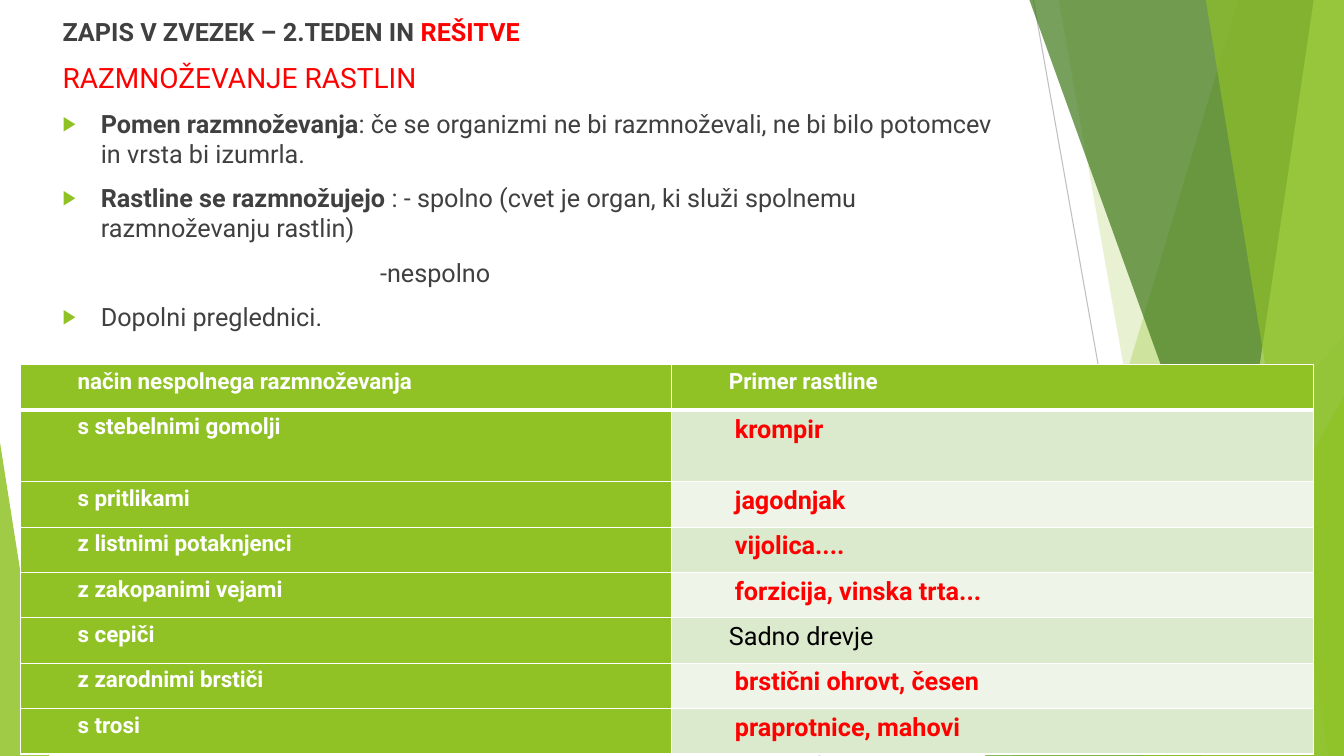
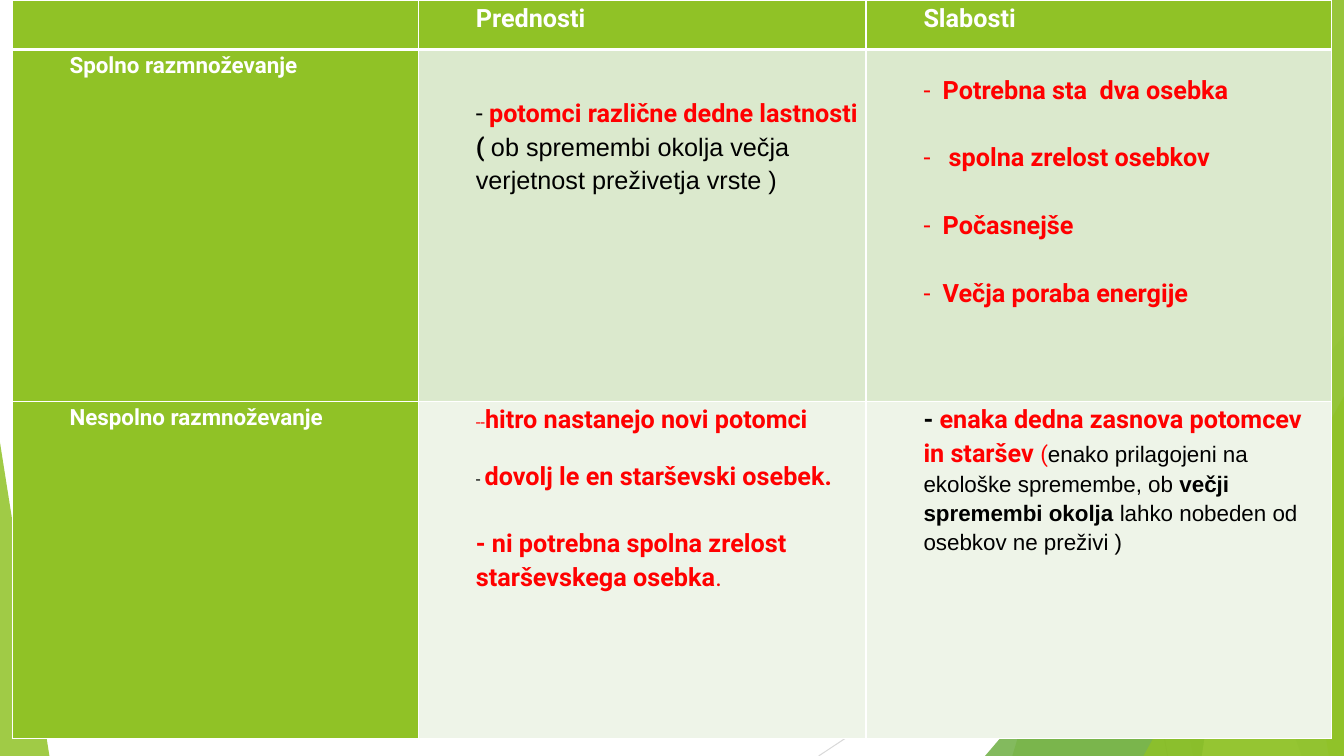
from dataclasses import dataclass

from lxml.etree import SubElement
from pptx import Presentation
from pptx.dml.color import RGBColor
from pptx.enum.shapes import MSO_CONNECTOR as Connector, MSO_SHAPE as Shape
from pptx.enum.text import MSO_AUTO_SIZE as AutoSize
from pptx.oxml.ns import qn
from pptx.util import Inches, Pt

WIDTH, HEIGHT = 13.33, 7.5
GREEN, WHITE, RED, BLACK, GRAY = "90C226", "FFFFFF", "FF0000", "000000", "404040"
BANDS = ("DBE9CD", "EEF4E8")
CELL_INDENT = 0.5
ANSWER_INDENT = 0.56

# name: size, colour, bold, font
STYLES = {
    "heading": (18, GRAY, True, "Roboto"),
    "heading red": (18, RED, True, "Roboto"),
    "topic": (20, RED, False, "Roboto"),
    "body": (18, GRAY, False, "Roboto"),
    "label": (16, WHITE, True, "Roboto"),
    "column": (18, WHITE, True, "Roboto"),
    "answer": (18, RED, True, "Roboto"),
    "answer light": (18, RED, False, "Roboto"),
    "example": (18, BLACK, False, "Roboto"),
    "dash": (12, BLACK, False, "Roboto"),
    "dash red": (12, RED, False, "Roboto"),
    "dash bold": (18, BLACK, True, "Roboto"),
    "bracket": (16, RED, False, "Roboto"),
    "remark": (18, BLACK, False, "Arial"),
    "remark small": (16, BLACK, False, "Arial"),
    "remark bold": (16, BLACK, True, "Arial"),
}

# colour, opacity, top x, bottom x
WEDGES_BACK = [
    (GREEN, 30, 12.28, 10.04),
    (GREEN, 20, 10.5, 11.83),
]
WEDGES_FRONT = [
    ("3F7819", 70, 10.21, 12.91),
    ("C0E474", 70, 13.03, 11.92),
    (GREEN, 65, 11.96, 13.18),
]


@dataclass
class Bullet:
    character: str
    font: str
    colour: str
    percent: int


ARROW = Bullet("▶", "Arial", GREEN, 80)
DASH = Bullet("-", "Roboto", RED, 100)


@dataclass
class Text:
    """One paragraph: (text, style name) runs and its layout."""
    runs: list
    left: float = 0
    hanging: float = 0
    before: float = 0
    bullet: Bullet = None


@dataclass
class Cell:
    paragraphs: list
    top: float = 0


def rgb(value):
    return RGBColor.from_string(value)


def label(text, style="label", left=CELL_INDENT):
    return Cell([Text([(text, style)], left)])


def answer(text):
    return label(text, "answer", ANSWER_INDENT)


def cell_text(*runs, before=0):
    return Text(list(runs), CELL_INDENT, before=before)


class Deck:
    def __init__(self):
        self.presentation = Presentation()
        self.presentation.slide_width = Inches(WIDTH)
        self.presentation.slide_height = Inches(HEIGHT)
        self.slide = None

    def add_slide(self, layout):
        layouts = self.presentation.slide_layouts
        self.slide = self.presentation.slides.add_slide(layouts.get_by_name(layout))
        self.backdrop()

    def backdrop(self):
        self.line(10.25, 0, 11.58, HEIGHT, "BFBFBF")
        self.line(WIDTH, 4.03, 8.12, HEIGHT, "D9D9D9")
        for wedge in WEDGES_BACK:
            self.wedge(*wedge)
        self.triangle(9.77, 3.33, 3.56, "54A021", 72, 1)
        for wedge in WEDGES_FRONT:
            self.wedge(*wedge)
        self.triangle(11.34, 3.93, 1.99, GREEN, 80, 1)
        self.triangle(0, 4.39, 0.49, GREEN, 85, 0)

    def line(self, x1, y1, x2, y2, colour):
        ends = [Inches(value) for value in (x1, y1, x2, y2)]
        connector = self.slide.shapes.add_connector(Connector.STRAIGHT, *ends)
        connector.line.color.rgb = rgb(colour)
        connector.line.width = Pt(0.75)
        SubElement(connector._element.spPr, qn("a:effectLst"))

    def paint(self, shape, colour, opacity):
        shape.shadow.inherit = False
        shape.line.fill.background()
        shape.fill.solid()
        shape.fill.fore_color.rgb = rgb(colour)
        colour_element = shape._element.spPr.find(qn("a:solidFill"))[0]
        SubElement(colour_element, qn("a:alpha"), val=str(opacity * 1000))

    def wedge(self, colour, opacity, top_x, bottom_x):
        """Full-height band from a slanted left edge to the right slide edge."""
        corners = [(WIDTH, 0), (WIDTH, HEIGHT), (bottom_x, HEIGHT)]
        builder = self.slide.shapes.build_freeform(Inches(top_x), 0)
        builder.add_line_segments([(Inches(x), Inches(y)) for x, y in corners])
        self.paint(builder.convert_to_shape(), colour, opacity)

    def triangle(self, left, top, width, colour, opacity, apex):
        """Triangle that stands on the bottom edge of the slide."""
        shape = self.slide.shapes.add_shape(
            Shape.ISOSCELES_TRIANGLE, Inches(left), Inches(top),
            Inches(width), Inches(HEIGHT - top))
        shape.adjustments[0] = apex
        self.paint(shape, colour, opacity)

    def fill_text(self, frame, texts, line_spacing):
        for number, text in enumerate(texts):
            paragraph = frame.add_paragraph() if number else frame.paragraphs[0]
            paragraph.line_spacing = line_spacing
            paragraph.space_before = Pt(text.before)
            self.set_bullet(paragraph, text)
            for words, style in text.runs:
                run = paragraph.add_run()
                run.text = words
                size, colour, bold, font = STYLES[style]
                values = {"size": Pt(size), "bold": bold, "name": font}
                for name, value in values.items():
                    setattr(run.font, name, value)
                run.font.color.rgb = rgb(colour)

    def set_bullet(self, paragraph, text):
        properties = paragraph._p.get_or_add_pPr()
        properties.set("marL", str(Inches(text.left)))
        properties.set("indent", str(-Inches(text.hanging)))
        bullet = text.bullet
        if bullet is None:
            SubElement(properties, qn("a:buNone"))
            return
        colour = SubElement(properties, qn("a:buClr"))
        SubElement(colour, qn("a:srgbClr"), val=bullet.colour)
        SubElement(properties, qn("a:buSzPct"), val=str(bullet.percent * 1000))
        SubElement(properties, qn("a:buFont"), typeface=bullet.font)
        SubElement(properties, qn("a:buChar"), char=bullet.character)

    def body(self, left, top, width, height, texts):
        title = self.slide.shapes.title
        title._element.getparent().remove(title._element)
        body = self.slide.placeholders[1]
        box = {"left": left, "top": top, "width": width, "height": height}
        for name, value in box.items():
            setattr(body, name, Inches(value))
        body.text_frame.word_wrap = True
        body.text_frame.auto_size = AutoSize.NONE
        self.fill_text(body.text_frame, texts, 1.0)

    def table(self, left, top, columns, heights, rows):
        frame = self.slide.shapes.add_table(
            len(heights), len(columns), Inches(left), Inches(top),
            Inches(sum(columns)), Inches(sum(heights)))
        table = frame.table
        table.first_row = table.horz_banding = False
        for column, width in zip(table.columns, columns):
            column.width = Inches(width)
        for row, height in zip(table.rows, heights):
            row.height = Inches(height)
        for row_number, row in enumerate(rows):
            for column_number, content in enumerate(row):
                cell = table.cell(row_number, column_number)
                is_label = row_number == 0 or column_number == 0
                fill = GREEN if is_label else BANDS[(row_number - 1) % 2]
                self.format_cell(cell, fill, row_number, content.top)
                self.fill_text(cell.text_frame, content.paragraphs, 1.15)

    def format_cell(self, cell, fill, row_number, top):
        margins = {"left": 0.07, "top": top, "right": 0.07, "bottom": 0}
        for side, margin in margins.items():
            setattr(cell, f"margin_{side}", Inches(margin))
        borders = {"L": 1, "R": 1, "T": 3 if row_number == 1 else 1,
                   "B": 3 if row_number == 0 else 1}
        properties = cell._tc.get_or_add_tcPr()
        for side, width in borders.items():
            border = SubElement(properties, qn(f"a:ln{side}"), w=str(Pt(width)))
            SubElement(SubElement(border, qn("a:solidFill")),
                       qn("a:srgbClr"), val=WHITE)
        cell.fill.solid()
        cell.fill.fore_color.rgb = rgb(fill)


def notebook_slide(deck):
    deck.add_slide("Title and Content")
    item = {"left": 0.38, "hanging": 0.38, "before": 10, "bullet": ARROW}
    deck.body(0.52, 0.11, 9.62, 7.11, [
        Text([("ZAPIS V ZVEZEK – 2.TEDEN IN ", "heading"),
              ("REŠITVE", "heading red")]),
        Text([("RAZMNOŽEVANJE RASTLIN", "topic")], before=10),
        Text([("Pomen razmnoževanja", "heading"),
              (": če se organizmi ne bi razmnoževali, ne bi bilo potomcev "
               "in vrsta bi izumrla.", "body")], **item),
        Text([("Rastline se razmnožujejo", "heading"),
              (" : - spolno (cvet je organ, ki služi spolnemu "
               "razmnoževanju rastlin)", "body")], **item),
        Text([("-nespolno", "body")], left=3.15, before=10),
        Text([("Dopolni preglednici.", "body")], **item),
    ])
    deck.table(0.2, 3.62, [6.46, 6.37], [0.45, 0.71] + [0.45] * 6, [
        (label("način nespolnega razmnoževanja"), label("Primer rastline")),
        (label("s stebelnimi gomolji"), answer("krompir")),
        (label("s pritlikami"), answer("jagodnjak")),
        (label("z listnimi potaknjenci"), answer("vijolica....")),
        (label("z zakopanimi vejami"), answer("forzicija, vinska trta...")),
        (label("s cepiči"), label("Sadno drevje", "example")),
        (label("z zarodnimi brstiči"), answer("brstični ohrovt, česen")),
        (label("s trosi"), answer("praprotnice, mahovi")),
    ])


def comparison_slide(deck):
    deck.add_slide("Blank")
    sexual_strengths = Cell([cell_text(
        ("- ", "example"), ("potomci različne dedne lastnosti ", "answer"),
        ("( ", "dash bold"),
        ("ob spremembi okolja večja verjetnost preživetja vrste )", "remark"),
    )], top=0.45)
    weaknesses = [("Potrebna sta  dva osebka", 0.19), ("spolna zrelost osebkov", 0.25),
                  ("Počasnejše", 0.19), ("Večja poraba energije", 0.19)]
    sexual_weaknesses = Cell([
        Text([(words, "answer")], CELL_INDENT + hanging, hanging,
             24 if number else 0, DASH)
        for number, (words, hanging) in enumerate(weaknesses)
    ], top=0.22)
    asexual_strengths = Cell([
        cell_text(("--", "dash red"), ("hitro nastanejo novi potomci", "answer")),
        cell_text(("- ", "dash"), ("dovolj le en starševski osebek.", "answer"),
                  before=16),
        cell_text(("- ni potrebna spolna zrelost starševskega osebka", "answer"),
                  (".", "answer light"), before=24),
    ])
    asexual_weaknesses = Cell([cell_text(
        ("- ", "dash bold"), ("enaka dedna zasnova potomcev in staršev ", "answer"),
        ("(", "bracket"),
        ("enako prilagojeni na ekološke spremembe, ob ", "remark small"),
        ("večji spremembi okolja ", "remark bold"),
        ("lahko nobeden od osebkov ne preživi )", "remark small"),
    )])
    deck.table(0.12, 0, [4.03, 4.44, 4.62], [0.49, 3.49, 3.35], [
        (Cell([]), label("Prednosti", "column"), label("Slabosti", "column")),
        (label("Spolno razmnoževanje"), sexual_strengths, sexual_weaknesses),
        (label("Nespolno razmnoževanje"), asexual_strengths, asexual_weaknesses),
    ])


def main():
    deck = Deck()
    notebook_slide(deck)
    comparison_slide(deck)
    deck.presentation.save("out.pptx")


if __name__ == "__main__":
    main()
